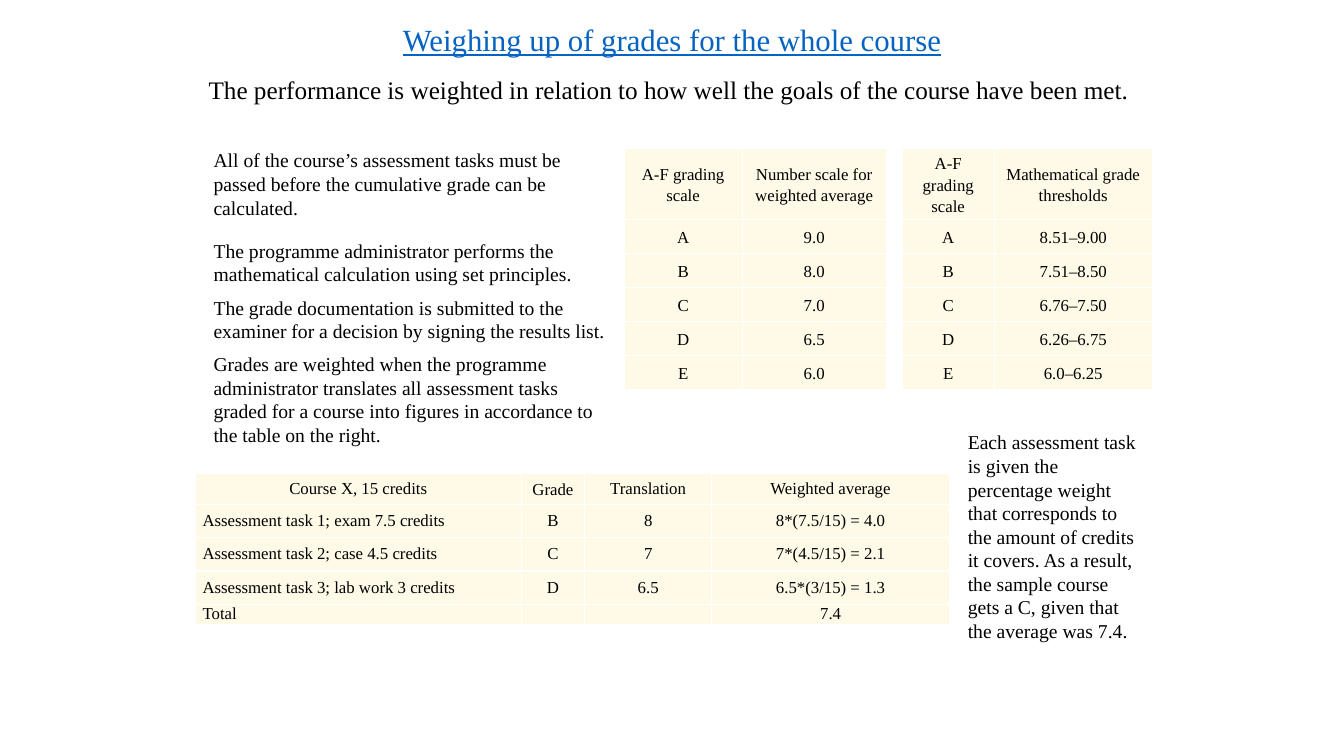
from dataclasses import dataclass

from pptx import Presentation
from pptx.dml.color import RGBColor
from pptx.enum.text import MSO_ANCHOR as Anchor, PP_ALIGN as Align
from pptx.oxml import parse_xml
from pptx.oxml.ns import nsdecls
from pptx.util import Inches, Pt

WIDTH, HEIGHT = Inches(13.33), Inches(7.5)
COLORS = {"ink": "000000", "title": "0563C1", "cream": "FFF9E7", "border": "FFFFFF"}
FONT = "Times New Roman"


@dataclass(frozen=True)
class Area:
    """Percentages of the slide's width and height."""
    left: float
    top: float
    width: float
    height: float


@dataclass(frozen=True)
class TextBlock:
    area: Area
    texts: tuple[str, ...]
    size: float = 14
    color: str = "ink"
    align: Align = Align.LEFT
    anchor: Anchor = Anchor.MIDDLE
    spacing: float = 1.0
    underline: bool = False
    gaps: tuple[float, ...] = ()


@dataclass(frozen=True)
class GradeTable:
    left: float
    top: float
    columns: tuple[float, ...]
    rows: tuple[float, ...]
    cells: tuple[tuple[str, ...], ...]
    spacing: float = 1.15
    tasks_first: bool = False


def across(share: float) -> int:
    return round(WIDTH * share / 100)


def down(share: float) -> int:
    return round(HEIGHT * share / 100)


def place(area: Area) -> tuple[int, int, int, int]:
    return across(area.left), down(area.top), across(area.width), down(area.height)


def write_text(para, text: str, *, size: float, color: str = "ink",
               align: Align = Align.LEFT, spacing: float = 1.0,
               before: float = 0, after: float = 0, underline: bool = False) -> None:
    para.alignment = align
    para.line_spacing = spacing
    para.space_before, para.space_after = Pt(before), Pt(after)
    if not text:
        para._p.append(parse_xml(f'<a:endParaRPr {nsdecls("a")} sz="{size * 100}"/>'))
        return
    span = para.add_run()
    span.text = text
    span.font.name = FONT
    span.font.size = Pt(size)
    span.font.underline = underline
    span.font.color.rgb = RGBColor.from_string(COLORS[color])


def draw_block(page, block: TextBlock) -> None:
    frame = page.shapes.add_textbox(*place(block.area)).text_frame
    frame.word_wrap = True
    frame.vertical_anchor = block.anchor
    for index, text in enumerate(block.texts):
        para = frame.add_paragraph() if index else frame.paragraphs[0]
        write_text(para, text, size=block.size, color=block.color, align=block.align,
                   spacing=block.spacing, underline=block.underline,
                   before=block.gaps[index - 1] if index else 0)


def style_cell(cell) -> None:
    cell.margin_left = cell.margin_right = Inches(0.07)
    cell.margin_top = cell.margin_bottom = 0
    cell.vertical_anchor = Anchor.MIDDLE
    properties = cell._tc.get_or_add_tcPr()
    for side in ("lnL", "lnR", "lnT", "lnB"):
        properties.append(parse_xml(
            f'<a:{side} {nsdecls("a")} w="12700"><a:solidFill>'
            f'<a:srgbClr val="{COLORS["border"]}"/></a:solidFill></a:{side}>'))
    cell.fill.solid()
    cell.fill.fore_color.rgb = RGBColor.from_string(COLORS["cream"])


def draw_table(page, grades: GradeTable):
    area = Area(grades.left, grades.top, sum(grades.columns), sum(grades.rows))
    table = page.shapes.add_table(
        len(grades.rows), len(grades.columns), *place(area)).table
    for column, share in zip(table.columns, grades.columns):
        column.width = across(share)
    for row, share in zip(table.rows, grades.rows):
        row.height = down(share)
    for row_index, texts in enumerate(grades.cells):
        for column_index, text in enumerate(texts):
            cell = table.cell(row_index, column_index)
            style_cell(cell)
            is_task = grades.tasks_first and row_index > 0 and column_index == 0
            write_text(cell.text_frame.paragraphs[0], text, size=12, after=3,
                       align=Align.LEFT if is_task else Align.CENTER,
                       spacing=grades.spacing)
    return table


SCALE_ROWS = (9.47,) + (4.5,) * 5

NUMBER_SCALE = GradeTable(46.44, 19.6, (8.78, 10.73), SCALE_ROWS, (
    ("A-F grading scale", "Number scale for weighted average"),
    ("A", "9.0"), ("B", "8.0"), ("C", "7.0"), ("D", "6.5"), ("E", "6.0")))

THRESHOLDS = GradeTable(67.14, 19.6, (6.83, 11.78), SCALE_ROWS, (
    ("A-F grading scale", "Mathematical grade thresholds"),
    ("A", "8.51–9.00"), ("B", "7.51–8.50"), ("C", "6.76–7.50"),
    ("D", "6.26–6.75"), ("E", "6.0–6.25")))

SAMPLE_COURSE = GradeTable(
    14.55, 62.6, (24.23, 4.73, 9.45, 17.7), (4.13, 4.4, 4.4, 4.4, 2.13), (
        ("Course X, 15 credits", "Grade", "Translation", "Weighted average"),
        ("Assessment task 1; exam 7.5 credits", "B", "8", "8*(7.5/15) = 4.0"),
        ("Assessment task 2; case 4.5 credits", "C", "7", "7*(4.5/15) = 2.1"),
        ("Assessment task 3; lab work 3 credits", "D", "6.5", "6.5*(3/15) = 1.3"),
        ("Total", "", "", "7.4")),
    spacing=1.0, tasks_first=True)

BLOCKS = (
    TextBlock(Area(0, 0, 100, 11.07), ("Weighing up of grades for the whole course",),
              size=22, color="title", align=Align.CENTER, spacing=0.9, underline=True),
    TextBlock(Area(0, 9.2, 100, 5.33),
              ("The performance is weighted in relation to how well the goals of "
               "the course have been met. ",),
              size=18, align=Align.CENTER, anchor=Anchor.TOP),
    TextBlock(Area(15.15, 18.67, 31.28, 41.33), (
        "All of the course’s assessment tasks must be passed before the cumulative "
        "grade can be calculated.",
        "The programme administrator performs the mathematical calculation using "
        "set principles.",
        "The grade documentation is submitted to the examiner for a decision by "
        "signing the results list.",
        "Grades are weighted when the programme administrator translates all "
        "assessment tasks graded for a course into figures in accordance to the "
        "table on the right."), gaps=(14, 7, 7)),
    TextBlock(Area(71.27, 56.13, 14.48, 29.6), (
        "Each assessment task is given the percentage weight that corresponds to "
        "the amount of credits it covers. As a result, the sample course gets a C, "
        "given that the average was 7.4.",)),
)


def main() -> None:
    deck = Presentation()
    deck.slide_width, deck.slide_height = WIDTH, HEIGHT
    page = deck.slides.add_slide(deck.slide_layouts[6])
    for block in BLOCKS:
        draw_block(page, block)
    for grades in (NUMBER_SCALE, THRESHOLDS):
        draw_table(page, grades)
    course = draw_table(page, SAMPLE_COURSE)
    course.cell(0, 1).text_frame.paragraphs[0].line_spacing = 1.15
    deck.save("out.pptx")


if __name__ == "__main__":
    main()
